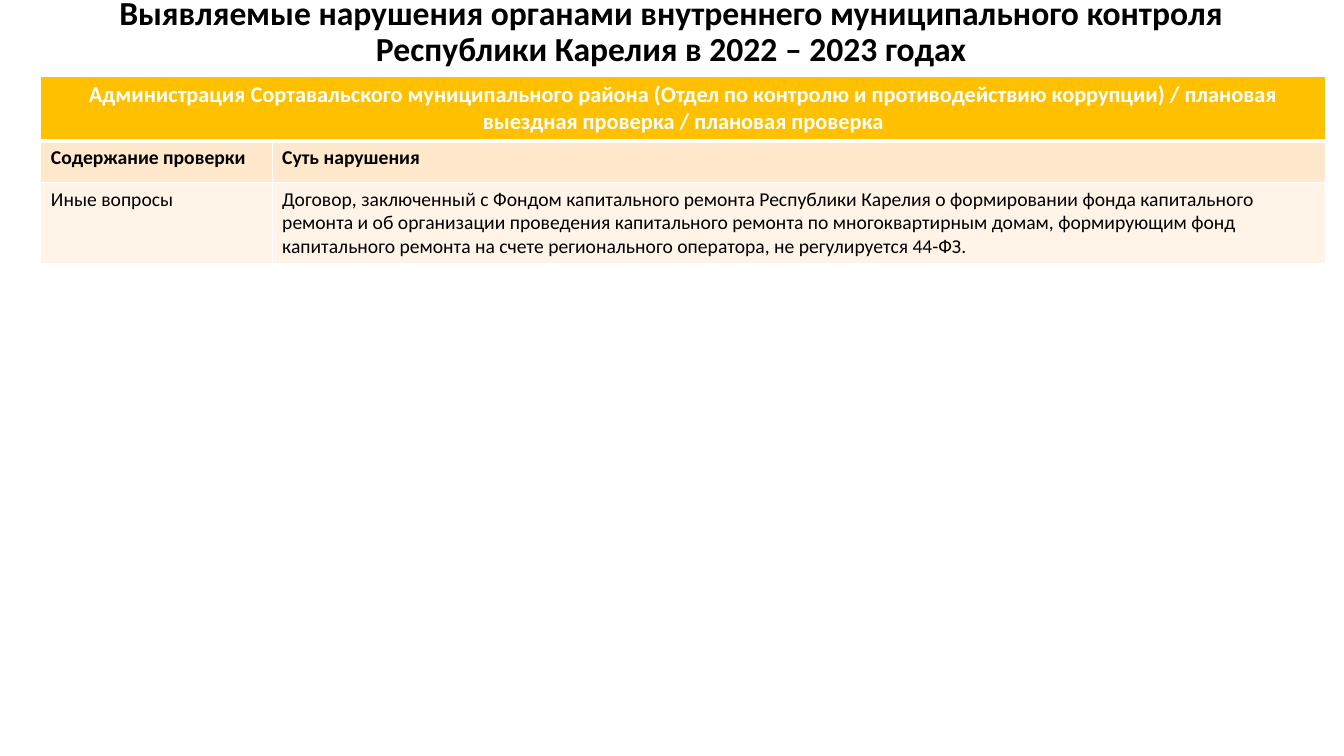
import pptx
import pptx.dml.color
import pptx.enum.text
import pptx.oxml
import pptx.oxml.ns
import pptx.util

Cm = pptx.util.Cm
Pt = pptx.util.Pt
RGBColor = pptx.dml.color.RGBColor
PP_ALIGN = pptx.enum.text.PP_ALIGN

BLACK = RGBColor(0x00, 0x00, 0x00)
WHITE = RGBColor(0xFF, 0xFF, 0xFF)
AMBER = RGBColor(0xFF, 0xC0, 0x00)
PEACH = RGBColor(0xFF, 0xE8, 0xCC)
PALE_PEACH = RGBColor(0xFF, 0xF4, 0xE7)

HEADING = ("Выявляемые нарушения органами внутреннего муниципального контроля "
           "Республики Карелия в 2022 – 2023 годах")
INSPECTION = ("Администрация Сортавальского муниципального района (Отдел по контролю "
              "и противодействию коррупции) / плановая выездная проверка / плановая проверка")
FINDINGS = [
    ("Содержание проверки", "Суть нарушения"),
    ("Иные вопросы",
     "Договор, заключенный с Фондом капитального ремонта Республики Карелия о формировании "
     "фонда капитального ремонта и об организации проведения капитального ремонта по "
     "многоквартирным домам, формирующим фонд капитального ремонта на счете регионального "
     "оператора, не регулируется 44-ФЗ."),
]

HEADING_FONT = {"name": "Calibri", "size": Pt(24), "bold": True}
INSPECTION_FONT = {"name": "Calibri", "size": Pt(16), "bold": True}
COLUMN_FONT = {"name": "Calibri", "size": Pt(14), "bold": True}
FINDING_FONT = {**COLUMN_FONT, "bold": False}

COLUMN_SHARES = (0.18, 0.82)
ROW_HEIGHTS = (Cm(1.58), Cm(1.04), Cm(2.05))


def write_text(frame, text, font_format, color, alignment):
    paragraph = frame.paragraphs[0]
    paragraph.alignment = alignment
    run = paragraph.add_run()
    run.text = text
    for attribute, value in font_format.items():
        setattr(run.font, attribute, value)
    run.font.color.rgb = color
    return paragraph


def draw_borders(cell, widths):
    """Add white borders; widths maps a side (L, R, T, B) to points."""
    properties = cell._tc.get_or_add_tcPr()
    for side, width in widths.items():
        properties.append(pptx.oxml.parse_xml(
            f'<a:ln{side} {pptx.oxml.ns.nsdecls("a")} w="{Pt(width)}">'
            f'<a:solidFill><a:srgbClr val="{WHITE}"/></a:solidFill></a:ln{side}>'))


def add_heading(slide, left, top, width, height):
    heading = slide.shapes.title
    box = {"left": left, "top": top, "width": width, "height": height}
    for attribute, value in box.items():
        setattr(heading, attribute, value)
    frame_format = {"word_wrap": True,
                    "auto_size": pptx.enum.text.MSO_AUTO_SIZE.NONE,
                    "vertical_anchor": pptx.enum.text.MSO_ANCHOR.MIDDLE}
    for attribute, value in frame_format.items():
        setattr(heading.text_frame, attribute, value)
    paragraph = write_text(heading.text_frame, HEADING, HEADING_FONT, BLACK, PP_ALIGN.CENTER)
    paragraph.line_spacing = 0.9


def add_violations(slide, left, top, width):
    violations = slide.shapes.add_table(
        len(ROW_HEIGHTS), len(COLUMN_SHARES), left, top, width, sum(ROW_HEIGHTS)).table
    for column, share in zip(violations.columns, COLUMN_SHARES):
        column.width = int(width * share)
    for row, height in zip(violations.rows, ROW_HEIGHTS):
        row.height = height
    violations.cell(0, 0).merge(violations.cell(0, len(COLUMN_SHARES) - 1))

    rows = [
        ((INSPECTION,), INSPECTION_FONT, WHITE, AMBER, PP_ALIGN.CENTER),
        (FINDINGS[0], COLUMN_FONT, BLACK, PEACH, PP_ALIGN.LEFT),
        (FINDINGS[1], FINDING_FONT, BLACK, PALE_PEACH, PP_ALIGN.LEFT),
    ]
    for row_index, (texts, font_format, color, fill, alignment) in enumerate(rows):
        widths = {"L": 1, "R": 1,
                  "T": 3 if row_index == 1 else 1,
                  "B": 3 if row_index == 0 else 1}
        for column_index in range(len(COLUMN_SHARES)):
            cell = violations.cell(row_index, column_index)
            draw_borders(cell, widths)
            cell.fill.solid()
            cell.fill.fore_color.rgb = fill
            if column_index < len(texts):
                write_text(cell.text_frame, texts[column_index], font_format, color, alignment)


def main():
    presentation = pptx.Presentation()
    presentation.slide_width = Cm(33.87)
    presentation.slide_height = Cm(19.05)
    slide = presentation.slides.add_slide(
        presentation.slide_layouts.get_by_name("Title Only"))
    add_heading(slide, Cm(2.31), Cm(0), Cm(29.21), Cm(1.63))
    add_violations(slide, Cm(1.03), Cm(1.92), Cm(32.38))
    presentation.save("out.pptx")


if __name__ == "__main__":
    main()
